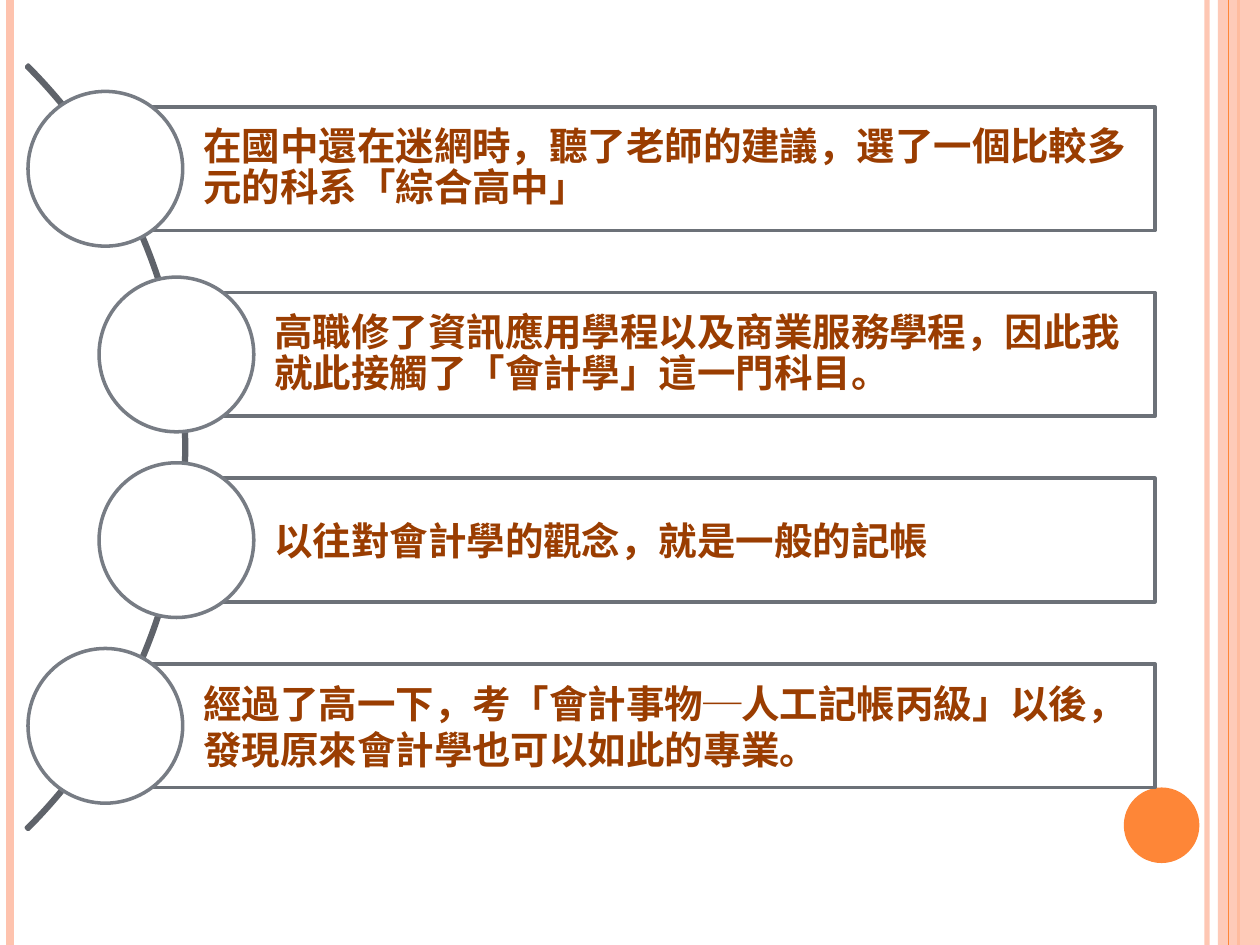
from lxml import etree
from pptx import Presentation
from pptx.dml.color import RGBColor
from pptx.enum.shapes import MSO_CONNECTOR, MSO_SHAPE
from pptx.enum.text import MSO_ANCHOR, PP_ALIGN
from pptx.oxml.ns import qn
from pptx.util import Pt

LINE = MSO_CONNECTOR.STRAIGHT
RECT, OVAL, ARC = MSO_SHAPE.RECTANGLE, MSO_SHAPE.OVAL, MSO_SHAPE.BLOCK_ARC
MIDDLE, LEFT = MSO_ANCHOR.MIDDLE, PP_ALIGN.LEFT

# text, circle centre x, line spacing
INNER, OUTER = 100.8, 60.2
STEPS = [
    ("在國中還在迷網時，聽了老師的建議，選了一個比較多元的科系「綜合高中」", OUTER, 0.9),
    ("高職修了資訊應用學程以及商業服務學程，因此我就此接觸了「會計學」這一門科目。", INNER, 0.9),
    ("以往對會計學的觀念，就是一般的記帳", INNER, 1.0),
    ("經過了高一下，考「會計事物─人工記帳丙級」以後，發現原來會計學也可以如此的專業。", OUTER, 1.0),
]
THEME = {
    "font": "Noto Sans CJK SC", "size": 22, "text": "9A3D01",
    "paper": "FFFFFF", "bar": "6C7178", "ring": "777C84", "arc": "5F636A",
    "pale": "FEC3AE", "orange": "FE8637",
}
# x, colour, weight, opacity in percent
RULES = [(689.8, "pale", 3, 93), (5.8, "pale", 4.5, 100), (707.8, "orange", 1.5, 100)]
EDGE = (702, "orange", 0.75, 100)

WIDE, HIGH = 720, 540
MID, PITCH = 255.6, 106.1
RING, BAR, RIGHT = 88.4, 70.7, 660
ARC_X, ARC_D = -511.2, 617.8


def tone(name):
    return RGBColor.from_string(THEME[name])


def fade(shape, percent):
    """Set the opacity of every colour set directly on the shape."""
    for clr in shape._element.spPr.iter(qn("a:srgbClr")):
        etree.SubElement(clr, qn("a:alpha")).set("val", str(percent * 1000))


def add_rule(slide, x, color, weight, opacity):
    rule = slide.shapes.add_connector(LINE, Pt(x), 0, Pt(x), Pt(HIGH))
    rule.line.color.rgb = tone(color)
    rule.line.width = Pt(weight)
    if opacity < 100:
        fade(rule, opacity)
    etree.SubElement(rule._element.spPr, qn("a:effectLst"))


def add_form(slide, kind, box, fill, line=None):
    form = slide.shapes.add_shape(kind, *(Pt(v) for v in box))
    form.shadow.inherit = False
    form.fill.solid()
    form.fill.fore_color.rgb = tone(fill)
    if line:
        form.line.color.rgb = tone(line)
        form.line.width = Pt(2)
    else:
        form.line.fill.background()
    return form


def write(form, text, spacing):
    frame = form.text_frame
    frame.text = text
    frame.word_wrap = True
    frame.vertical_anchor = MIDDLE
    frame.margin_left = Pt(56.1)
    frame.margin_top = frame.margin_right = frame.margin_bottom = Pt(4.4)
    para = frame.paragraphs[0]
    para.alignment = LEFT
    para.line_spacing = spacing
    font = para.runs[0].font
    font.name, font.size, font.bold = THEME["font"], Pt(THEME["size"]), True
    font.color.rgb = tone("text")
    asian = etree.SubElement(font._element, qn("a:ea"))
    asian.set("typeface", THEME["font"])


def add_frame(slide):
    for rule in RULES:
        add_rule(slide, *rule)
    band = add_form(slide, RECT, (696, 0, WIDE - 696, HIGH), "pale")
    fade(band, 87)
    add_rule(slide, *EDGE)
    add_form(slide, OVAL, (642.2, 450, 43.2, 43.2), "orange")


def add_steps(slide):
    arc = add_form(slide, ARC, (ARC_X, MID - ARC_D / 2, ARC_D, ARC_D), "arc", "arc")
    # start and end angle (315 and 45 degrees), then band thickness
    for i, value in enumerate((189, 27, 0.0025)):
        arc.adjustments[i] = value
    for i, (text, x, spacing) in enumerate(STEPS):
        y = MID + (i - (len(STEPS) - 1) / 2) * PITCH
        bar = add_form(slide, RECT, (x, y - BAR / 2, RIGHT - x, BAR), "paper", "bar")
        write(bar, text, spacing)
        add_form(slide, OVAL, (x - RING / 2, y - RING / 2, RING, RING), "paper", "ring")


def main():
    deck = Presentation()
    deck.slide_width, deck.slide_height = Pt(WIDE), Pt(HIGH)
    slide = deck.slides.add_slide(deck.slide_layouts[6])
    add_frame(slide)
    add_steps(slide)
    deck.save("out.pptx")


if __name__ == "__main__":
    main()
